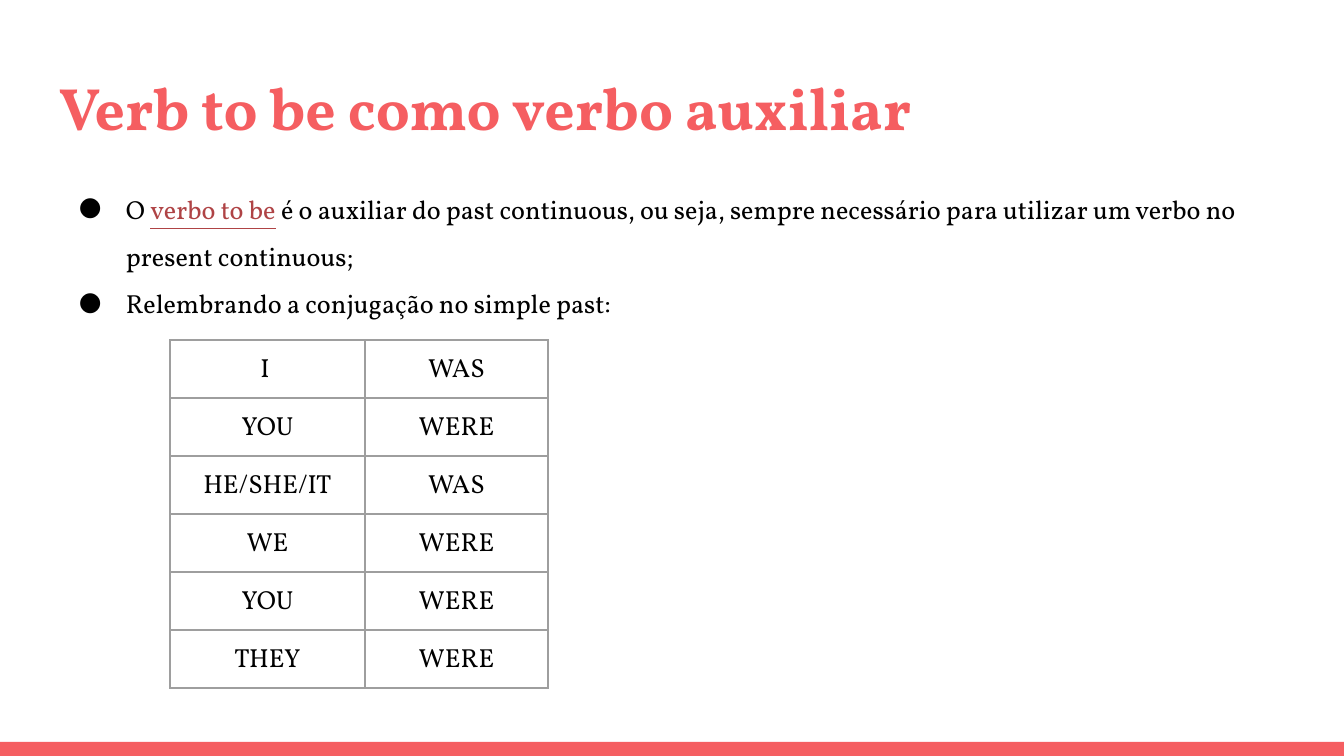
import pptx
import pptx.dml.color
import pptx.enum.shapes
import pptx.enum.text
import pptx.oxml
import pptx.oxml.ns
import pptx.util
from dataclasses import dataclass

SCALE = 914400 / 134.4


@dataclass(frozen=True)
class Theme:
    """Colours, font and type sizes of the deck."""
    accent: str = "F55E61"
    keyword: str = "AF4345"
    ink: str = "000000"
    grid: str = "9E9E9E"
    font: str = "Vollkorn"
    title_size: int = 32
    body_size: int = 14
    grid_width: float = 0.75


THEME = Theme()
TITLE = "Verb to be como verbo auxiliar"
POINTS = [
    [
        ("O ", {}),
        ("verbo to be", {"color": THEME.keyword, "underline": True}),
        (" é o auxiliar do past continuous, ou seja, sempre necessário para "
         "utilizar um verbo no present continuous;", {}),
    ],
    [("Relembrando a conjugação no simple past:", {})],
]
CONJUGATION = [
    ("I ", "WAS"),
    ("YOU", "WERE"),
    ("HE/SHE/IT", "WAS"),
    ("WE", "WERE"),
    ("YOU", "WERE"),
    ("THEY", "WERE"),
]


def emu(px):
    """Turn px into EMU."""
    return pptx.util.Emu(round(px * SCALE))


def add_span(para, text, **formats):
    """Add a run of body text, changed by the given format values."""
    span = para.add_run()
    span.text = text
    values = {"name": THEME.font, "size": THEME.body_size, "color": THEME.ink, **formats}
    span.font.color.rgb = pptx.dml.color.RGBColor.from_string(values.pop("color"))
    values["size"] = pptx.util.Pt(values["size"])
    for name, value in values.items():
        setattr(span.font, name, value)


def add_frame(page, box):
    """Add a wrapping text box and return its text frame."""
    frame = page.shapes.add_textbox(*map(emu, box)).text_frame
    values = {f"margin_{side}": emu(13) for side in ("left", "top", "right", "bottom")}
    values["word_wrap"] = True
    values["vertical_anchor"] = pptx.enum.text.MSO_ANCHOR.TOP
    for name, value in values.items():
        setattr(frame, name, value)
    return frame


def add_bullet(para, indent, hanging):
    """Give the paragraph a round bullet and a hanging indent."""
    properties = para._p.get_or_add_pPr()
    properties.set("marL", str(emu(indent)))
    properties.set("indent", str(-emu(hanging)))
    namespace = pptx.oxml.ns.nsdecls("a")
    for xml in (
        f'<a:buClr {namespace}><a:srgbClr val="{THEME.ink}"/></a:buClr>',
        f'<a:buFont {namespace} typeface="{THEME.font}"/>',
        f'<a:buChar {namespace} char="●"/>',
    ):
        properties.append(pptx.oxml.parse_xml(xml))


def add_borders(cell):
    """Draw a thin line on each side of the cell."""
    namespace = pptx.oxml.ns.nsdecls("a")
    properties = cell._tc.get_or_add_tcPr()
    for side in "LRTB":
        properties.append(pptx.oxml.parse_xml(
            f'<a:ln{side} {namespace} w="{pptx.util.Pt(THEME.grid_width)}"><a:solidFill>'
            f'<a:srgbClr val="{THEME.grid}"/></a:solidFill></a:ln{side}>'))


def draw_footer(page, box):
    """Draw the coloured band at the foot of the page."""
    band = page.shapes.add_shape(pptx.enum.shapes.MSO_SHAPE.RECTANGLE, *map(emu, box))
    band.shadow.inherit = False
    band.fill.solid()
    band.fill.fore_color.rgb = pptx.dml.color.RGBColor.from_string(THEME.accent)
    band.line.fill.background()


def draw_title(page, box):
    """Write the page title."""
    para = add_frame(page, box).paragraphs[0]
    add_span(para, TITLE, size=THEME.title_size, color=THEME.accent, bold=True)


def draw_points(page, box):
    """Write the bulleted points."""
    frame = add_frame(page, box)
    for index, spans in enumerate(POINTS):
        para = frame.add_paragraph() if index else frame.paragraphs[0]
        add_bullet(para, 67, 47)
        para.line_spacing = 1.5
        for text, formats in spans:
            add_span(para, text, **formats)


def draw_conjugation(page, box, first_width):
    """Draw the table of pronouns and verb forms."""
    left, top, width, height = box
    table = page.shapes.add_table(len(CONJUGATION), 2, *map(emu, box)).table
    table.first_row = table.horz_banding = False
    for column, column_width in zip(table.columns, (first_width, width - first_width)):
        column.width = emu(column_width)
    for row, words in zip(table.rows, CONJUGATION):
        row.height = emu(height / len(CONJUGATION))
        for cell, word in zip(row.cells, words):
            add_borders(cell)
            cell.fill.background()
            for side in ("left", "top", "right", "bottom"):
                setattr(cell, f"margin_{side}", emu(13))
            para = cell.text_frame.paragraphs[0]
            para.alignment = pptx.enum.text.PP_ALIGN.CENTER
            add_span(para, word)


def main():
    """Build the deck and save it."""
    deck = pptx.Presentation()
    deck.slide_width, deck.slide_height = emu(1344), emu(756)
    page = deck.slides.add_slide(deck.slide_layouts[6])
    draw_footer(page, (0, 742, 1344, 14))
    draw_title(page, (46, 58, 1252, 91))
    draw_points(page, (46, 165, 1252, 503))
    draw_conjugation(page, (170, 340, 378, 348), 195)
    deck.save("out.pptx")


if __name__ == "__main__":
    main()
